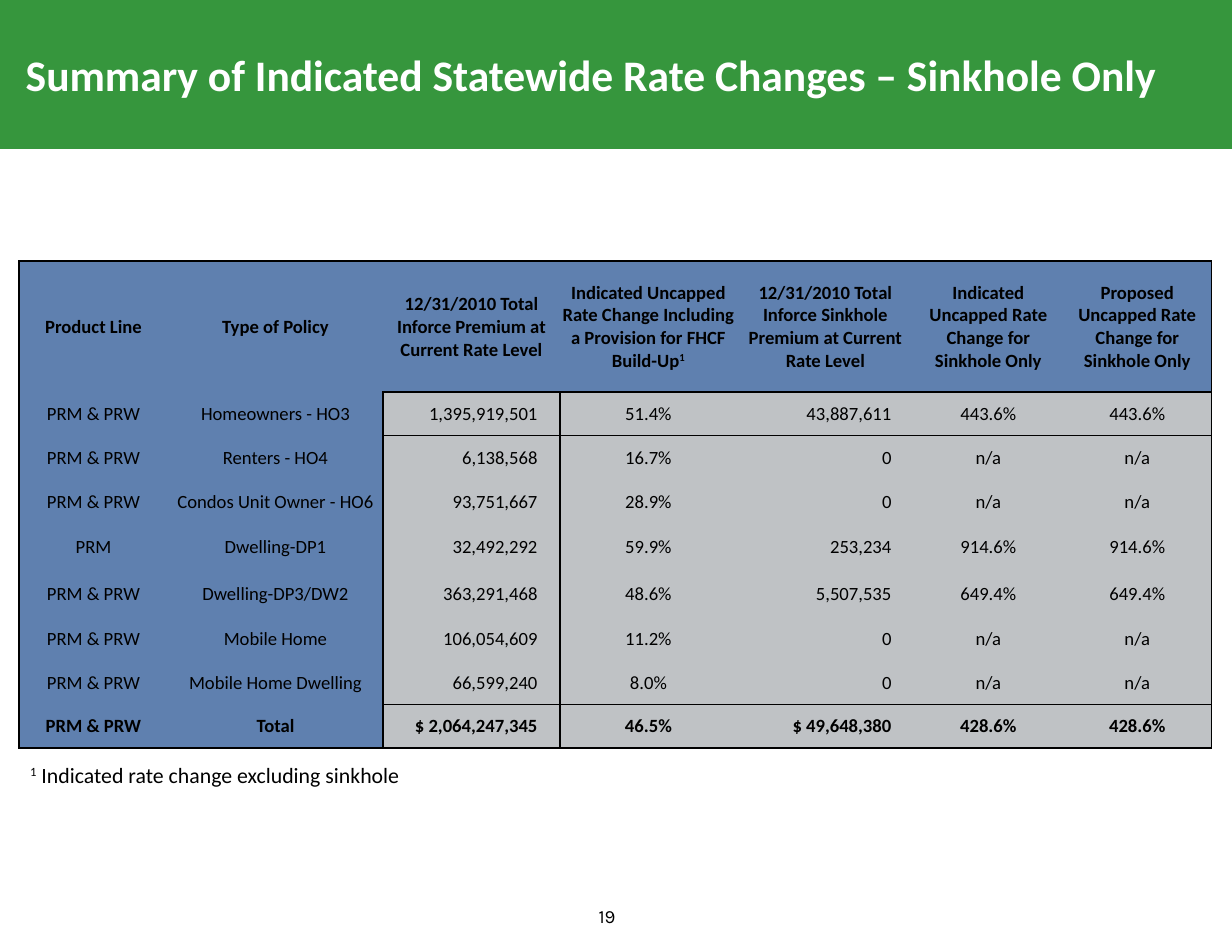
from lxml import etree
from pptx import Presentation
from pptx import util as u
from pptx.dml.color import RGBColor
from pptx.enum import shapes, text
from pptx.oxml import ns

GREEN = RGBColor(0x36, 0x96, 0x3D)
BLUE = RGBColor(0x5F, 0x80, 0xAF)
GREY = RGBColor(0xBF, 0xC2, 0xC5)
BLACK = RGBColor(0, 0, 0)
WHITE = RGBColor(0xFF, 0xFF, 0xFF)
NO_STYLE = "{2D5ABB26-0587-4C30-8999-92F81FD0307C}"
LEFT, CENTER, RIGHT = text.PP_ALIGN.LEFT, text.PP_ALIGN.CENTER, text.PP_ALIGN.RIGHT

HEADERS = [
    "Product Line",
    "Type of Policy",
    "12/31/2010 Total Inforce Premium at Current Rate Level",
    "Indicated Uncapped Rate Change Including a Provision for FHCF Build-Up^1",
    "12/31/2010 Total Inforce Sinkhole Premium at Current Rate Level",
    "Indicated Uncapped Rate Change for Sinkhole Only",
    "Proposed Uncapped Rate Change for Sinkhole Only",
]
# product line, policy, premium, indicated change, sinkhole premium, sinkhole change
POLICIES = [
    ("PRM & PRW", "Homeowners - HO3", "1,395,919,501", "51.4%", "43,887,611", "443.6%"),
    ("PRM & PRW", "Renters - HO4", "6,138,568", "16.7%", "0", "n/a"),
    ("PRM & PRW", "Condos Unit Owner - HO6", "93,751,667", "28.9%", "0", "n/a"),
    ("PRM", "Dwelling-DP1", "32,492,292", "59.9%", "253,234", "914.6%"),
    ("PRM & PRW", "Dwelling-DP3/DW2", "363,291,468", "48.6%", "5,507,535", "649.4%"),
    ("PRM & PRW", "Mobile Home", "106,054,609", "11.2%", "0", "n/a"),
    ("PRM & PRW", "Mobile Home Dwelling", "66,599,240", "8.0%", "0", "n/a"),
    ("PRM & PRW", "Total", "$ 2,064,247,345", "46.5%", "$ 49,648,380", "428.6%"),
]
COLUMN_WIDTHS = [1.33, 1.92, 1.58, 1.58, 1.58, 1.33, 1.33]
ROW_HEIGHTS = [1.17, 0.39, 0.39, 0.39, 0.42, 0.42, 0.39, 0.39, 0.39]
LABEL_COLUMNS = 2
PREMIUM_COLUMNS = (2, 4)


class SlideBuilder:
    def __init__(self, prs, font="Calibri"):
        self.font = font
        self.s = prs.slides.add_slide(prs.slide_layouts[6])

    def add_text(self, tf, content, align=LEFT, color=BLACK, **style):
        """Fill the first paragraph; a character after ^ becomes superscript."""
        p = tf.paragraphs[0]
        p.alignment = align
        before, _, rest = content.partition("^")
        for part, raised in ((before, False), (rest[:1], True), (rest[1:], False)):
            if not part:
                continue
            r = p.add_run()
            r.text = part
            r.font.color.rgb = color
            for key, value in {"name": self.font, "bold": False, **style}.items():
                setattr(r.font, key, value)
            if raised:
                r.font._element.set("baseline", "30000")

    def banner(self, content, x, y, w, h):
        sp = self.s.shapes.add_shape(
            shapes.MSO_SHAPE.RECTANGLE, *map(u.Inches, (x, y, w, h)))
        sp.shadow.inherit = False
        sp.fill.solid()
        sp.fill.fore_color.rgb = GREEN
        sp.line.fill.background()
        tf = sp.text_frame
        margins = {"margin_left": 0.23, "margin_right": 0.11,
                   "margin_top": 0.06, "margin_bottom": 0.06}
        for key, value in margins.items():
            setattr(tf, key, u.Inches(value))
        tf.word_wrap = True
        tf.vertical_anchor = text.MSO_ANCHOR.MIDDLE
        self.add_text(tf, content, color=WHITE, size=u.Pt(28), bold=True)

    def label(self, content, x, y, w, h, align=LEFT, **style):
        tf = self.s.shapes.add_textbox(*map(u.Inches, (x, y, w, h))).text_frame
        tf.word_wrap = True
        self.add_text(tf, content, align, **style)

    def border(self, cell, sides):
        """Draw black 1 pt lines on the given sides, in the order L, R, T, B."""
        tc_pr = cell._tc.get_or_add_tcPr()
        for side in sides:
            ln = etree.SubElement(tc_pr, ns.qn(f"a:ln{side}"), w=str(u.Pt(1)))
            fill = etree.SubElement(ln, ns.qn("a:solidFill"))
            etree.SubElement(fill, ns.qn("a:srgbClr"), val=str(BLACK))

    def rate_table(self, rows, x, y):
        frame = self.s.shapes.add_table(
            len(rows), len(COLUMN_WIDTHS), u.Inches(x), u.Inches(y),
            u.Inches(sum(COLUMN_WIDTHS)), u.Inches(sum(ROW_HEIGHTS)))
        table = frame.table
        table.first_row = table.horz_banding = False
        table._tbl.tblPr.find(ns.qn("a:tableStyleId")).text = NO_STYLE
        for column, width in zip(table.columns, COLUMN_WIDTHS):
            column.width = u.Inches(width)
        for row, height in zip(table.rows, ROW_HEIGHTS):
            row.height = u.Inches(height)
        for i, row in enumerate(rows):
            for j, content in enumerate(row):
                self.rate_cell(table.cell(i, j), content, i, j, len(rows) - 1, len(row) - 1)

    def rate_cell(self, cell, content, i, j, last_row, last_column):
        header, total = i == 0, i == last_row
        is_label = j < LABEL_COLUMNS
        premium = not header and j in PREMIUM_COLUMNS
        edges = {
            "L": j == 0 or (j == LABEL_COLUMNS and not header),
            "R": j == last_column or (j == LABEL_COLUMNS - 1 and not header),
            "T": header or (not is_label and (i == 1 or total)),
            "B": total or (not is_label and (header or i == last_row - 1)),
        }
        self.border(cell, [side for side, drawn in edges.items() if drawn])
        cell.fill.solid()
        cell.fill.fore_color.rgb = BLUE if header or is_label else GREY
        cell.vertical_anchor = text.MSO_ANCHOR.MIDDLE
        margins = {"margin_left": 0.01, "margin_right": 0.2 if premium else 0.01,
                   "margin_top": 0.01, "margin_bottom": 0}
        for key, value in margins.items():
            setattr(cell, key, u.Inches(value))
        self.add_text(cell.text_frame, content, RIGHT if premium else CENTER,
                      size=u.Pt(12), bold=header or total)


def main():
    prs = Presentation()
    prs.slide_width, prs.slide_height = u.Inches(11), u.Inches(8.5)
    slide = SlideBuilder(prs)
    slide.label("19", 5.17, 8.03, 0.5, 0.31, CENTER, size=u.Pt(12), name="Karla")
    slide.banner("Summary of Indicated Statewide Rate Changes – Sinkhole Only", 0, 0, 11, 1.33)
    # the proposed sinkhole change equals the indicated one on every line
    slide.rate_table([HEADERS] + [row + row[-1:] for row in POLICIES], 0.17, 2.33)
    slide.label("^1 Indicated rate change excluding sinkhole", 0.17, 6.75, 4.92, 0.34, size=u.Pt(14))
    prs.save("out.pptx")


if __name__ == "__main__":
    main()
